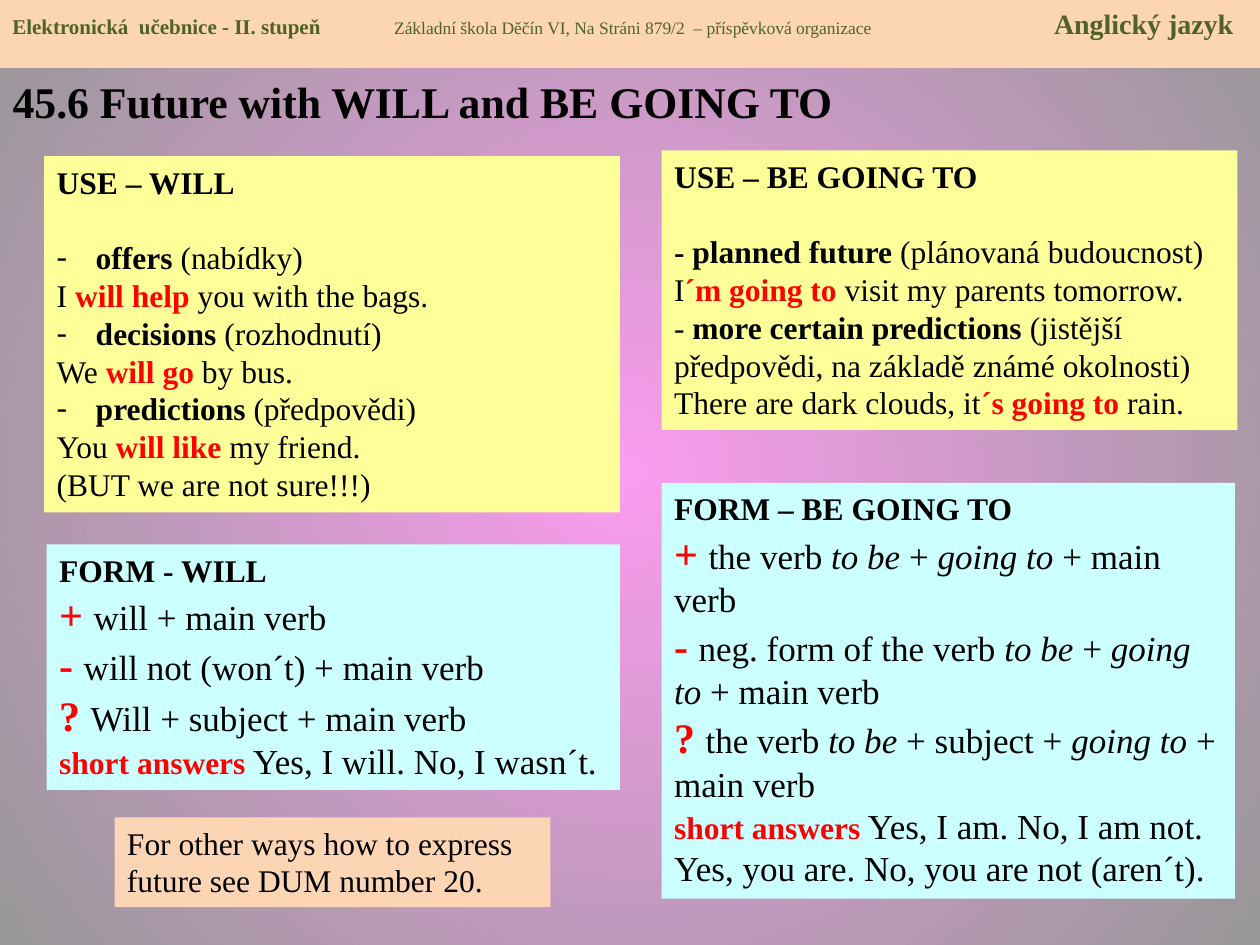
import pptx
import pptx.util
import pptx.dml.color
import pptx.enum.shapes
import pptx.enum.text
import pptx.oxml
import pptx.oxml.ns
import lxml.etree

COLORS = {"black": "000000", "red": "FF0000", "green": "4F6228", "peach": "FCD5B5",
          "yellow": "FFFF99", "cyan": "CCFFFF", "pink": "FA9CEF", "gray": "979797"}
qn = pptx.oxml.ns.qn
rgb = {name: pptx.dml.color.RGBColor.from_string(h) for name, h in COLORS.items()}

prs = pptx.Presentation()
prs.slide_width, prs.slide_height = pptx.util.Inches(10), pptx.util.Inches(7.5)
s = prs.slides.add_slide(prs.slide_layouts.get_by_name("Comparison"))


def add_text(p, text, size=18, color="black", bold=False, italic=False):
    r = p.add_run()
    r.text = text
    r.font.name, r.font.size = "Times New Roman", pptx.util.Pt(size)
    r.font.bold, r.font.italic = bold, italic
    r.font.color.rgb = rgb[color]


def set_box(sp, left, top, width, height, fill=None):
    """Place a shape by percent of the slide, fill it and return its text frame."""
    sp.left, sp.width = (int(prs.slide_width * v / 100) for v in (left, width))
    sp.top, sp.height = (int(prs.slide_height * v / 100) for v in (top, height))
    if fill:
        sp.fill.solid()
        sp.fill.fore_color.rgb = rgb[fill]
        sp.line.fill.background()
    tf = sp.text_frame
    tf.word_wrap = True
    tf.auto_size = pptx.enum.text.MSO_AUTO_SIZE.NONE
    tf.vertical_anchor = pptx.enum.text.MSO_ANCHOR.TOP
    tf.paragraphs[0].alignment = pptx.enum.text.PP_ALIGN.LEFT
    return tf


# Background: circular gradient from the centre
bg = s.background.fill
bg.gradient()
for stop, name in zip(bg.gradient_stops, ("pink", "gray")):
    stop.color.rgb = rgb[name]
grad = s.element.find(".//" + qn("a:gradFill"))
grad.remove(grad.find(qn("a:lin")))
circle = lxml.etree.SubElement(grad, qn("a:path"), path="circle")
lxml.etree.SubElement(circle, qn("a:fillToRect"), l="50000", t="50000", r="50000", b="50000")

# Title
tf = set_box(s.shapes.title, 0, 7.2, 100, 92.8)
add_text(tf.paragraphs[0], "45.6 Future with WILL and BE GOING TO", size=25, bold=True)

# Header band and note
rect = pptx.enum.shapes.MSO_SHAPE.RECTANGLE
band, note = (s.shapes.add_shape(rect, 0, 0, 0, 0) for _ in range(2))
band.shadow.inherit = note.shadow.inherit = False

p = set_box(band, 0, 0, 100, 7.2, "peach").paragraphs[0]
tabs = lxml.etree.SubElement(p._p.get_or_add_pPr(), qn("a:tabLst"))
for pos, align in ((3.03, "l"), (9.69, "r")):
    lxml.etree.SubElement(tabs, qn("a:tab"), pos=str(pptx.util.Inches(pos)), algn=align)
add_text(p, "Elektronická  učebnice - II. stupeň\t", size=12, color="green", bold=True)
add_text(p, "Základní škola Děčín VI, Na Stráni 879/2  – příspěvková organizace\t",
         size=10, color="green")
add_text(p, "Anglický jazyk", size=16, color="green", bold=True)

p = set_box(note, 9.1, 86.5, 34.6, 9.5, "peach").paragraphs[0]
add_text(p, "For other ways how to express future see DUM number 20.")

# Panels: each paragraph is a list of (style, text) runs
STYLES = {
    "text": {}, "bullet": {"bold": True}, "bold": {"bold": True},
    "key": {"color": "red", "bold": True},
    "sign": {"size": 24, "color": "red", "bold": True},
    "plus": {"size": 24, "color": "red", "bold": True},
    "form": {"size": 20}, "verb": {"size": 20, "italic": True},
}
STYLES["plus"] = {**STYLES["sign"], "bold": True}
use_will = [
    [("bold", "USE – WILL")],
    [("bullet", "offers "), ("text", "(nabídky)")],
    [("text", "I "), ("key", "will help "), ("text", "you with the bags.")],
    [("bullet", "decisions "), ("text", "(rozhodnutí)")],
    [("text", "We "), ("key", "will go "), ("text", "by bus.")],
    [("bullet", "predictions "), ("text", "(předpovědi)")],
    [("text", "You "), ("key", "will like "), ("text", "my friend.")],
    [("text", "(BUT we are not sure!!!)")],
]
form_will = [
    [("bold", "FORM - WILL")],
    [("sign", "+ "), ("form", "will + main verb")],
    [("sign", "- "), ("form", "will not (won´t) + main verb")],
    [("sign", "? "), ("form", "Will + subject + main verb")],
    [("key", "short answers"), ("form", " Yes, I will. No, I wasn´t.")],
]
use_going = [
    [("bold", "USE – BE GOING TO")],
    [("bold", "- planned future "), ("text", "(plánovaná budoucnost)")],
    [("text", "I"), ("key", "´m going to "), ("text", "visit my parents tomorrow.")],
    [("text", "- "), ("bold", "more certain predictions "),
     ("text", "(jistější předpovědi, na základě známé okolnosti)")],
    [("text", "There are dark clouds, it"), ("key", "´s going to "), ("text", "rain.")],
]
form_going = [
    [("bold", "FORM – BE GOING TO")],
    [("sign", "+ "), ("form", "the verb "), ("verb", "to be "), ("form", "+ "),
     ("verb", "going to "), ("form", "+ main verb")],
    [("sign", "- "), ("form", "neg. form of the verb "), ("verb", "to be "), ("form", "+ "),
     ("verb", "going to"), ("form", " + main verb")],
    [("sign", "? "), ("form", "the verb "), ("verb", "to be "), ("form", "+ subject + "),
     ("verb", "going to "), ("form", "+ main verb")],
    [("key", "short answers"), ("form", " Yes, I am. No, I am not.")],
    [("form", "Yes, you are. No, you are not (aren´t).")],
]
panels = [  # placeholder, left, top, width, height, fill, gap after heading, paragraphs
    (1, 3.5, 16.53, 45.7, 37.7, "yellow", 21.6, use_will),
    (2, 3.7, 57.6, 45.5, 26, "cyan", 0, form_will),
    (3, 52.5, 15.9, 45.7, 29.6, "yellow", 21.6, use_going),
    (4, 52.5, 51.1, 45.5, 44, "cyan", 0, form_going),
]
for idx, left, top, width, height, fill, gap, paragraphs in panels:
    tf = set_box(s.placeholders[idx], left, top, width, height, fill)
    for i, runs in enumerate(paragraphs):
        p = tf.add_paragraph() if i else tf.paragraphs[0]
        p.space_before = pptx.util.Pt(0)
        p.space_after = pptx.util.Pt(0 if i else gap)
        pPr = p._p.get_or_add_pPr()
        bullet = runs[0][0] == "bullet"
        indent = pptx.util.Inches(0.31) if bullet else 0
        pPr.set("marL", str(indent))
        pPr.set("indent", str(-indent))
        if bullet:
            lxml.etree.SubElement(pPr, qn("a:buFont"), typeface="Times New Roman")
            lxml.etree.SubElement(pPr, qn("a:buChar"), char="-")
        else:
            lxml.etree.SubElement(pPr, qn("a:buNone"))
        for style, text in runs:
            add_text(p, text, **STYLES[style])

prs.save("out.pptx")
